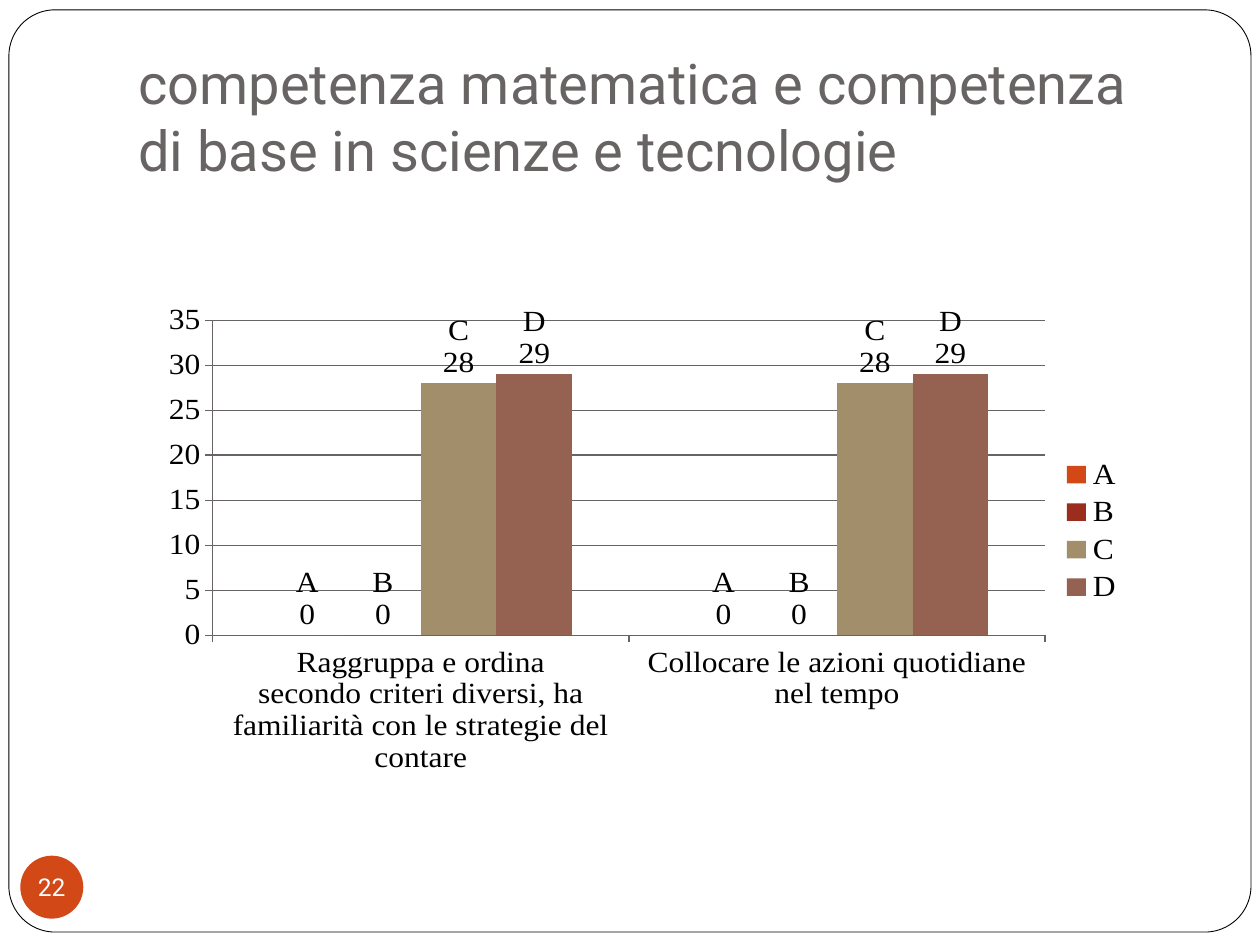
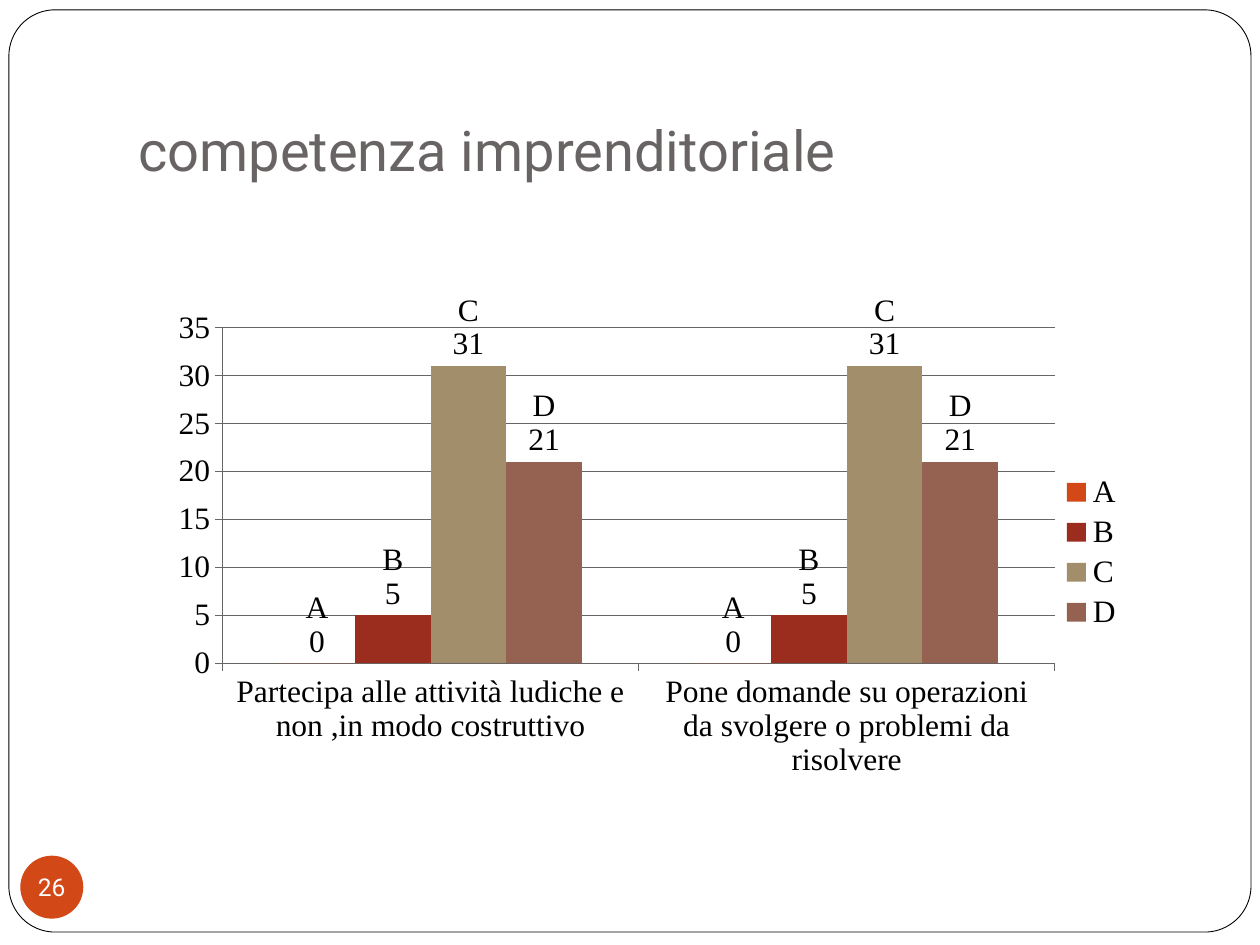
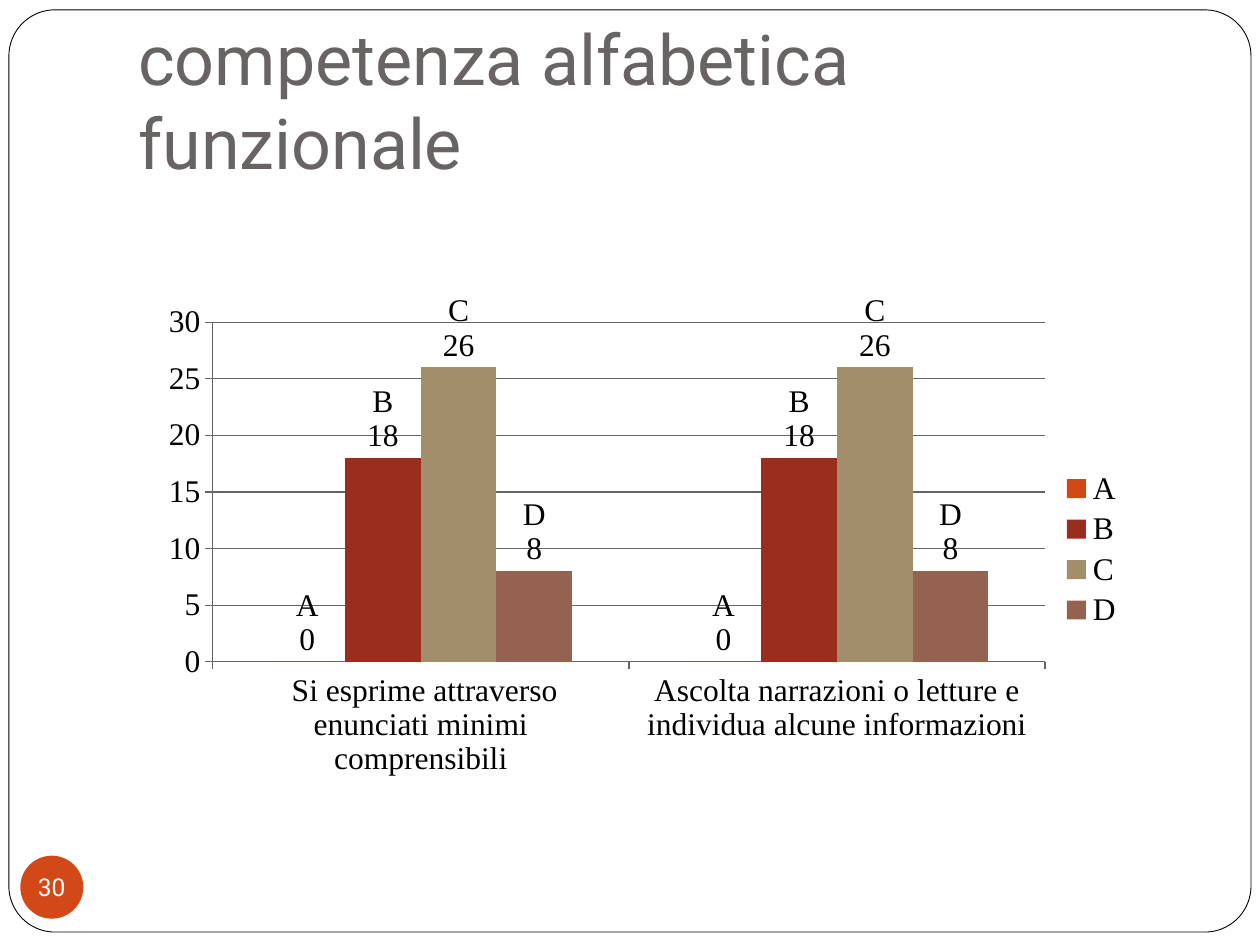
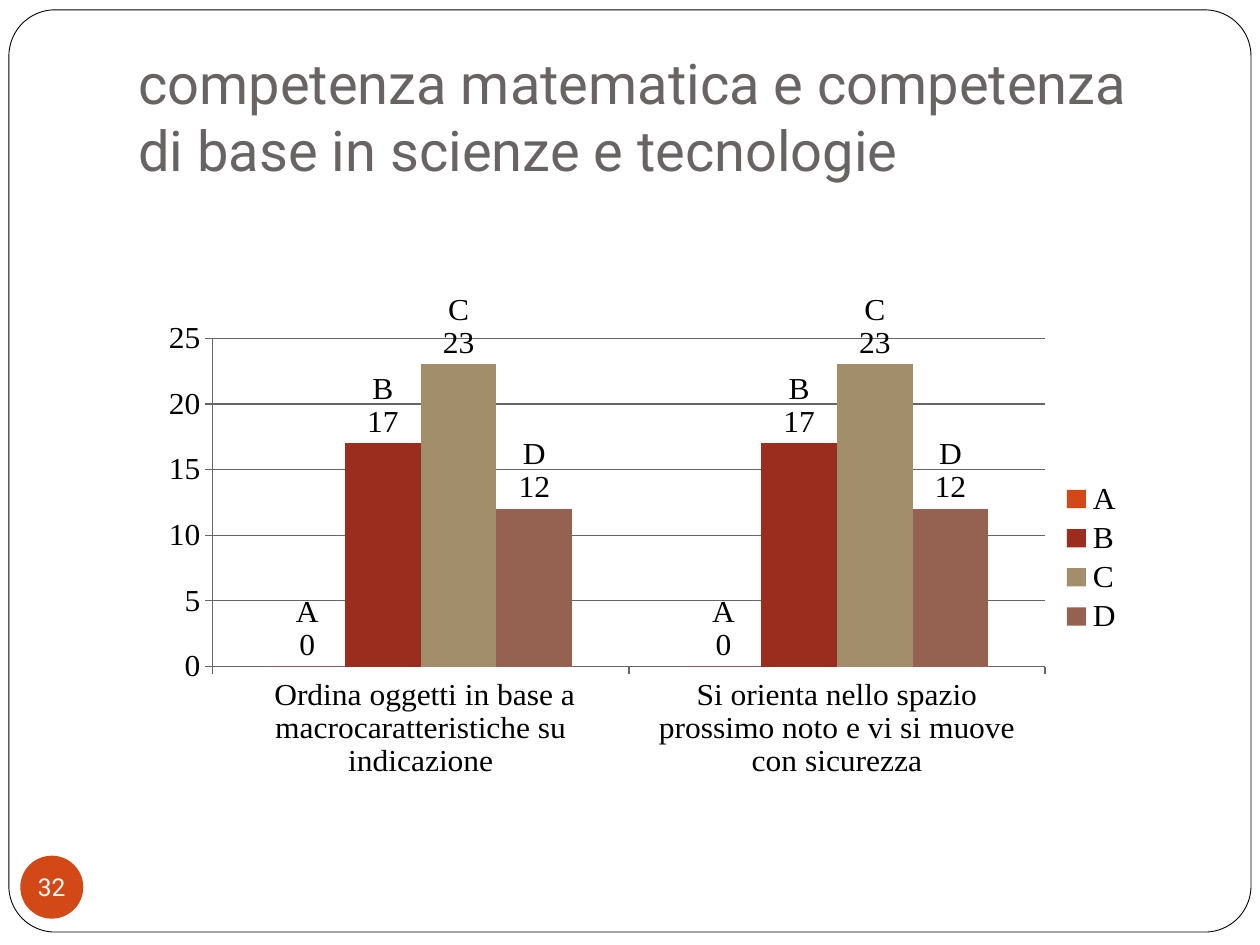
import pptx
import pptx.chart.data
import pptx.dml.color
import pptx.enum.chart
import pptx.enum.shapes
import pptx.enum.text
import pptx.oxml
import pptx.oxml.ns
import pptx.util

Cm = pptx.util.Cm
Pt = pptx.util.Pt
RGB = pptx.dml.color.RGBColor
Shape = pptx.enum.shapes.MSO_SHAPE
Anchor = pptx.enum.text.MSO_ANCHOR
Align = pptx.enum.text.PP_ALIGN
qn = pptx.oxml.ns.qn

WHITE = RGB(0xFF, 0xFF, 0xFF)
BLACK = RGB(0x00, 0x00, 0x00)
GREY = RGB(0x69, 0x64, 0x64)
ORANGE = RGB(0xD3, 0x48, 0x17)
RED = RGB(0x9B, 0x2D, 0x1F)
SAND = RGB(0xA2, 0x8E, 0x6A)
BROWN = RGB(0x95, 0x62, 0x51)
GRADES = {"A": ORANGE, "B": RED, "C": SAND, "D": BROWN}
SANS = "Roboto"
SERIF = "Times New Roman"

FRAME = (Cm(0.18), Cm(0.2), Cm(25.04), Cm(18.59))
TITLE = (Cm(2.54), Cm(0.76), Cm(21.59), Cm(3.18))
BADGE = (Cm(0.41), Cm(17.25), Cm(1.27), Cm(1.27))
CHART = (Cm(3.1), Cm(5.92), Cm(19.81), Cm(10.31))

MATHS = "competenza matematica e competenza di base in scienze e tecnologie"
PAGES = [
    (22, MATHS, 32, 0.06, (0, 0, 28, 29),
     ["Raggruppa e ordina\nsecondo criteri diversi, ha familiarità con le strategie del contare\n",
      "Collocare le azioni quotidiane nel tempo"]),
    (26, "competenza imprenditoriale", 32, 0.07, (0, 5, 31, 21),
     ["Partecipa alle attività ludiche e non ,in modo costruttivo",
      "Pone domande su operazioni da svolgere o problemi da risolvere"]),
    (30, "competenza alfabetica funzionale", 40, 0.06, (0, 18, 26, 8),
     [" Si esprime attraverso enunciati minimi comprensibili",
      "Ascolta narrazioni o letture e individua alcune informazioni"]),
    (32, MATHS, 32, 0.06, (0, 17, 23, 12),
     [" Ordina oggetti in base a macrocaratteristiche su indicazione",
      "Si orienta nello spazio prossimo noto e vi si muove con sicurezza"]),
]


def style(font, name, size, color):
    """Set the face, size and colour of a font."""
    font.name = name
    font.size = Pt(size)
    font.color.rgb = color


def place(shape, box):
    """Move a shape to a box."""
    shape.left, shape.top, shape.width, shape.height = box


def add_frame(slide, box):
    """Put the rounded frame behind everything on the slide's layout."""
    frame = slide.shapes.add_shape(Shape.ROUNDED_RECTANGLE, *box)
    frame.adjustments[0] = 0.05
    frame.shadow.inherit = False
    frame.fill.solid()
    frame.fill.fore_color.rgb = WHITE
    frame.line.color.rgb = BLACK
    frame.line.width = Pt(0.5)
    slide.slide_layout.shapes.element.insert(2, frame.element)


def add_title(slide, box, text, size):
    """Fill and format the title placeholder."""
    title = slide.shapes.title
    place(title, box)
    frame = title.text_frame
    frame.text = text
    frame.word_wrap = True
    frame.auto_size = pptx.enum.text.MSO_AUTO_SIZE.NONE
    frame.vertical_anchor = Anchor.BOTTOM
    frame.margin_left = frame.margin_right = frame.margin_bottom = Cm(0.25)
    frame.margin_top = Cm(0.13)
    line = frame.paragraphs[0]
    line.alignment = Align.LEFT
    style(line.font, SANS, size, GREY)


def add_badge(slide, box, number):
    """Draw the round page number."""
    badge = slide.shapes.add_shape(Shape.OVAL, *box)
    badge.shadow.inherit = False
    badge.fill.solid()
    badge.fill.fore_color.rgb = ORANGE
    badge.line.fill.background()
    frame = badge.text_frame
    frame.text = str(number)
    frame.word_wrap = False
    frame.vertical_anchor = Anchor.MIDDLE
    frame.margin_left = frame.margin_right = frame.margin_top = frame.margin_bottom = 0
    line = frame.paragraphs[0]
    line.alignment = Align.CENTER
    style(line.font, SANS, 14, WHITE)


def set_plot(chart, left):
    """Fix the inner plot area as fractions of the chart."""
    area = chart.element.find(".//" + qn("c:plotArea"))
    for old in area.findall(qn("c:layout")):
        area.remove(old)
    spots = {"x": left, "y": 0.056, "w": 0.847, "h": 0.664}
    modes = "".join(f'<c:{key}Mode val="edge"/>' for key in "xy")
    sizes = "".join(f'<c:{key} val="{val}"/>' for key, val in spots.items())
    area.insert(0, pptx.oxml.parse_xml(
        f'<c:layout {pptx.oxml.ns.nsdecls("c")}><c:manualLayout>'
        f'<c:layoutTarget val="inner"/>{modes}{sizes}</c:manualLayout></c:layout>'))


def split_labels(chart):
    """Break each data label between its series name and its value."""
    for flag in list(chart.element.iter(qn("c:showBubbleSize"))):
        mark = pptx.oxml.parse_xml(f'<c:separator {pptx.oxml.ns.nsdecls("c")}/>')
        mark.text = "\n"
        flag.addnext(mark)


def add_chart(slide, box, left, marks, goals):
    """Draw the number of pupils at each grade for each goal."""
    data = pptx.chart.data.CategoryChartData()
    data.categories = goals
    for grade, mark in zip(GRADES, marks):
        data.add_series(grade, [mark] * len(goals))
    kind = pptx.enum.chart.XL_CHART_TYPE.COLUMN_CLUSTERED
    chart = slide.shapes.add_chart(kind, *box, data).chart
    chart.has_title = False
    style(chart.font, SERIF, 18, BLACK)
    chart.has_legend = True
    chart.legend.position = pptx.enum.chart.XL_LEGEND_POSITION.RIGHT
    chart.legend.include_in_layout = False
    plot = chart.plots[0]
    plot.vary_by_categories = False
    plot.gap_width = 150
    plot.overlap = 0
    for bars, color in zip(plot.series, GRADES.values()):
        bars.format.fill.solid()
        bars.format.fill.fore_color.rgb = color
        labels = bars.data_labels
        labels.show_value = labels.show_series_name = True
        labels.position = pptx.enum.chart.XL_LABEL_POSITION.OUTSIDE_END
    for axis in (chart.category_axis, chart.value_axis):
        axis.major_tick_mark = pptx.enum.chart.XL_TICK_MARK.OUTSIDE
        axis.format.line.color.rgb = GREY
    chart.value_axis.has_major_gridlines = True
    chart.value_axis.major_gridlines.format.line.color.rgb = GREY
    set_plot(chart, left)
    split_labels(chart)


def main():
    """Build the deck."""
    deck = pptx.Presentation()
    deck.slide_width, deck.slide_height = Cm(25.4), Cm(19.05)
    layout = deck.slide_layouts[5]
    for index, (number, text, size, left, marks, goals) in enumerate(PAGES):
        slide = deck.slides.add_slide(layout)
        if index == 0:
            add_frame(slide, FRAME)
        add_title(slide, TITLE, text, size)
        add_badge(slide, BADGE, number)
        add_chart(slide, CHART, left, marks, goals)
    deck.save("out.pptx")


if __name__ == "__main__":
    main()
